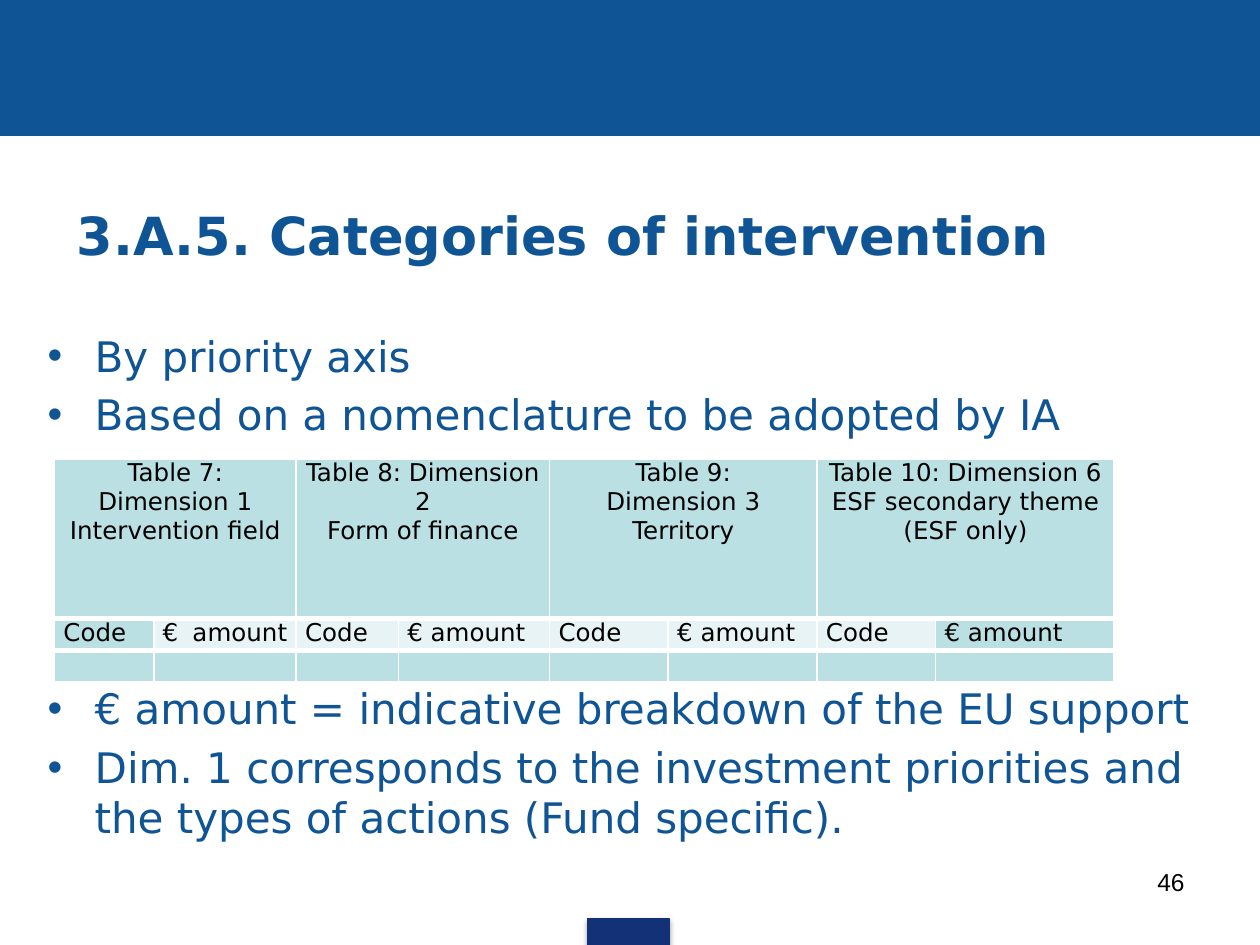
from dataclasses import dataclass

from lxml import etree
from pptx import Presentation
from pptx.dml.color import RGBColor
from pptx.enum.shapes import MSO_SHAPE
from pptx.enum.text import MSO_ANCHOR, PP_ALIGN
from pptx.oxml.ns import qn
from pptx.util import Cm, Pt

RECT = MSO_SHAPE.RECTANGLE
TOP, MIDDLE = MSO_ANCHOR.TOP, MSO_ANCHOR.MIDDLE
LEFT, CENTER = PP_ALIGN.LEFT, PP_ALIGN.CENTER
RIGHT, JUSTIFY = PP_ALIGN.RIGHT, PP_ALIGN.JUSTIFY

COLORS = {
    "blue": "0F5494",
    "navy": "133176",
    "teal": "BBE0E3",
    "pale": "E7F3F4",
    "white": "FFFFFF",
    "black": "000000",
}
FONT = "DejaVu Sans"
BULLET_INDENT = Cm(0.95)


@dataclass
class Box:
    """Position and size in centimetres."""
    x: float
    y: float
    w: float
    h: float

    def lengths(self) -> tuple:
        return Cm(self.x), Cm(self.y), Cm(self.w), Cm(self.h)


@dataclass
class Dimension:
    """A heading over a code column and an amount column."""
    heading: list[str]
    code_w: float
    amount_w: float


DIMENSIONS = [
    Dimension(["Table 7: Dimension 1", "Intervention field"], 2.0, 2.87),
    Dimension(["Table 8: Dimension 2", "Form of finance"], 2.06, 3.05),
    Dimension(["Table 9:", "Dimension 3", "Territory"], 2.39, 3.0),
    Dimension(["Table 10: Dimension 6", "ESF secondary theme", "(ESF only)"], 2.39, 3.6),
]
ROW_HEIGHTS = [3.22, 0.64, 0.64]


def rgb(name: str) -> RGBColor:
    return RGBColor.from_string(COLORS[name])


def add_node(parent, tag: str, **attrs: str):
    return etree.SubElement(parent, qn(tag), attrs)


def write(tf, lines: list[str], *, size=14, color="black", font=FONT, bold=False,
          align=LEFT, anchor=TOP, bullet=False) -> None:
    tf.word_wrap = True
    tf.vertical_anchor = anchor
    for i, line in enumerate(lines):
        p = tf.paragraphs[0] if i == 0 else tf.add_paragraph()
        p.alignment = align
        if bullet:
            if i:
                p.space_before = Pt(size * 0.2)
            pPr = p._p.get_or_add_pPr()
            pPr.set("marL", str(BULLET_INDENT))
            pPr.set("indent", str(-BULLET_INDENT))
            add_node(pPr, "a:buFont", typeface="Arial")
            add_node(pPr, "a:buChar", char="•")
        r = p.add_run()
        r.text = line
        r.font.size = Pt(size)
        r.font.name = font
        r.font.bold = bold
        r.font.color.rgb = rgb(color)


def add_text(s, box: Box, lines: list[str], **fmt) -> None:
    write(s.shapes.add_textbox(*box.lengths()).text_frame, lines, **fmt)


def add_bar(s, box: Box, color: str):
    sp = s.shapes.add_shape(RECT, *box.lengths())
    sp.shadow.inherit = False
    sp.fill.solid()
    sp.fill.fore_color.rgb = rgb(color)
    sp.line.color.rgb = rgb(color)
    sp.line.width = Pt(0.75)
    return sp


def add_shadow(sp) -> None:
    effects = sp._element.spPr.find(qn("a:effectLst"))
    shadow = add_node(effects, "a:outerShdw", blurRad=str(Pt(3.1)), dist=str(Pt(1.8)),
                      dir="5400000", rotWithShape="0")
    clr = add_node(shadow, "a:srgbClr", val=COLORS["black"])
    add_node(clr, "a:alpha", val="35000")


def style_cell(cell, fill: str, top: float, bottom: float) -> None:
    cell.margin_left = cell.margin_right = Cm(0.18)
    cell.margin_top = cell.margin_bottom = 0
    # Borders come before the fill in the cell properties
    tcPr = cell._tc.get_or_add_tcPr()
    for tag, width in (("a:lnL", 1), ("a:lnR", 1), ("a:lnT", top), ("a:lnB", bottom)):
        ln = add_node(tcPr, tag, w=str(Pt(width)))
        add_node(add_node(ln, "a:solidFill"), "a:srgbClr", val=COLORS["white"])
    cell.fill.solid()
    cell.fill.fore_color.rgb = rgb(fill)


def add_dimension_table(s, x: float, y: float) -> None:
    widths = [w for d in DIMENSIONS for w in (d.code_w, d.amount_w)]
    box = Box(x, y, sum(widths), sum(ROW_HEIGHTS))
    table = s.shapes.add_table(len(ROW_HEIGHTS), len(widths), *box.lengths()).table
    for row, height in zip(table.rows, ROW_HEIGHTS):
        row.height = Cm(height)

    last = len(widths) - 1
    for c, width in enumerate(widths):
        table.columns[c].width = Cm(width)
        head, label, blank = (table.cell(r, c) for r in range(3))
        style_cell(head, "teal", 1, 3)
        style_cell(label, "teal" if c in (0, last) else "pale", 3, 3)
        style_cell(blank, "teal", 3, 1)
        write(label.text_frame, ["€ amount " if c % 2 else "Code"], align=JUSTIFY)
        # Keeps the empty row low
        add_node(blank.text_frame.paragraphs[0]._p, "a:endParaRPr", sz="1400")

    for i, dim in enumerate(DIMENSIONS):
        head = table.cell(0, 2 * i)
        head.merge(table.cell(0, 2 * i + 1))
        write(head.text_frame, dim.heading, align=CENTER)


def main() -> None:
    prs = Presentation()
    prs.slide_width, prs.slide_height = Cm(25.4), Cm(19.05)
    s = prs.slides.add_slide(prs.slide_layouts[6])

    # Header band and footer mark
    add_bar(s, Box(0, 0, 25.4, 2.74), "blue")
    add_shadow(add_bar(s, Box(11.84, 18.52, 1.65, 0.55), "navy"))

    # Title and page number
    add_text(s, Box(1.3, 3.53, 22.86, 2.39), ["3.A.5. Categories of intervention"],
             size=30, color="blue", bold=True, anchor=MIDDLE)
    add_text(s, Box(18.21, 17.35, 5.92, 1.32), ["46"], font="Arial", align=RIGHT)

    # Bullets above and below the table
    bullets = dict(size=24, color="blue", bullet=True)
    add_text(s, Box(0.71, 6.53, 23.62, 2.5),
             ["By priority axis", "Based on a nomenclature to be adopted by IA"], **bullets)
    add_text(s, Box(0.71, 13.64, 23.62, 3.6),
             ["€ amount = indicative breakdown of the EU support",
              "Dim. 1 corresponds to the investment priorities and the types of actions "
              "(Fund specific)."], **bullets)

    add_dimension_table(s, 1.1, 9.25)
    prs.save("out.pptx")


if __name__ == "__main__":
    main()
